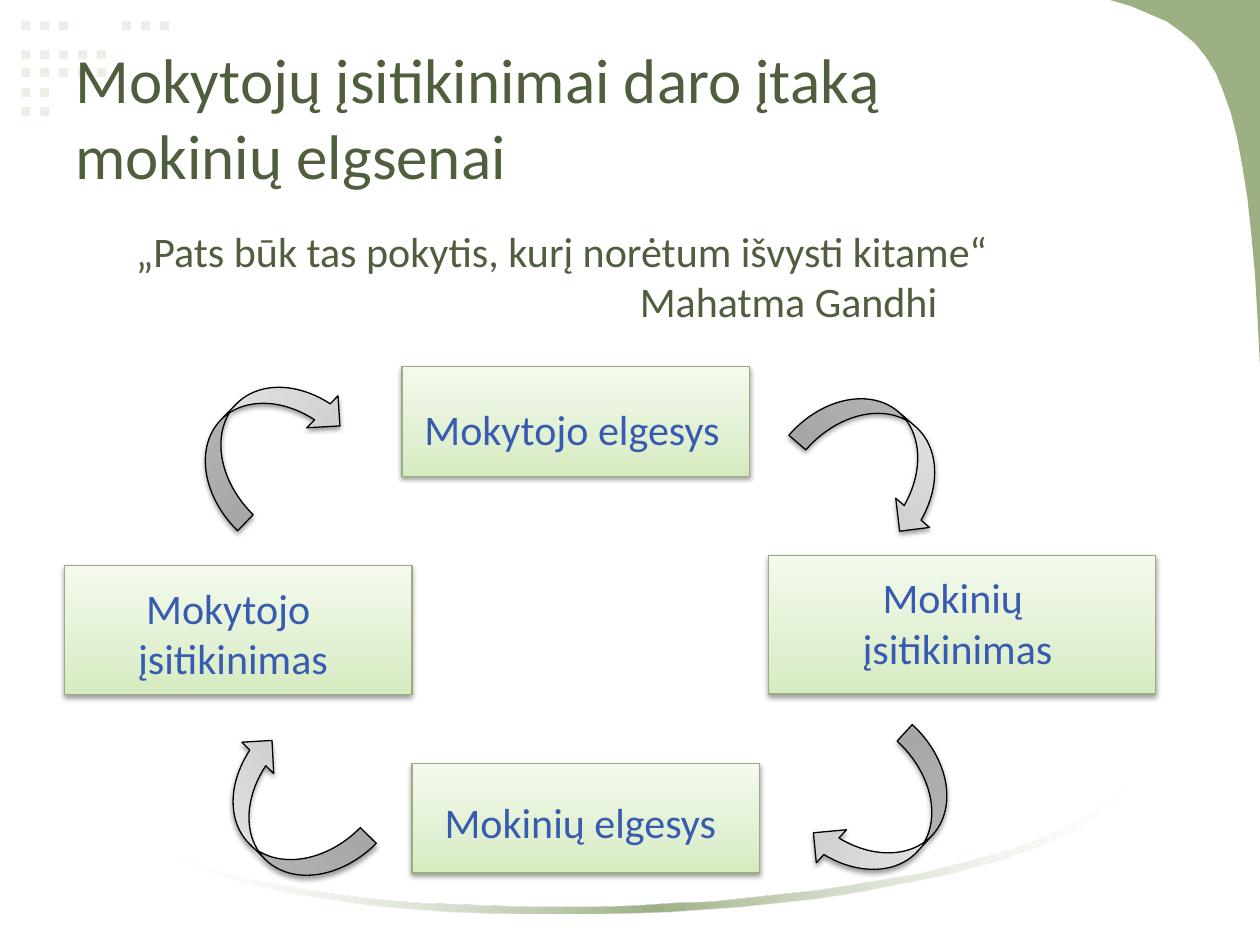
from lxml import etree
from pptx import Presentation
from pptx.dml.color import RGBColor
from pptx.enum.shapes import MSO_SHAPE
from pptx.enum.text import MSO_ANCHOR, PP_ALIGN
from pptx.oxml.ns import qn
from pptx.util import Inches, Pt

RECT, ARROW = MSO_SHAPE.RECTANGLE, MSO_SHAPE.CURVED_DOWN_ARROW
MIDDLE, TOP = MSO_ANCHOR.MIDDLE, MSO_ANCHOR.TOP
LEFT, CENTER = PP_ALIGN.LEFT, PP_ALIGN.CENTER


class Theme:
    font, title, body = "Calibri", Pt(36), Pt(24)
    dark, blue = "4F5E3C", "375BB0"
    dot, leaf, edge, black = "EBEFE6", "9CB084", "99AD80", "000000"
    # Gradient stops: position %, colour, opacity %
    green = [(0, "D5EBBF", 100), (35, "E1F0D2", 100), (100, "F3FAED", 100)]
    gray = [(0, "BDBDBD", 100), (35, "D1D1D1", 100), (100, "EEEEEE", 100)]
    sweep = [(0, "FFFFFF", 30), (50, "9CB084", 100), (100, "FFFFFF", 30)]


def paint(shape, fill, angle=270, line=None):
    """Fill with a colour or gradient stops; an outlined shape casts a shadow."""
    shape.shadow.inherit = False
    if isinstance(fill, str):
        shape.fill.solid()
        shape.fill.fore_color.rgb = RGBColor.from_string(fill)
    else:
        shape.fill.gradient()
        grad = shape.element.spPr.find(qn("a:gradFill"))
        for child in list(grad):
            grad.remove(child)
        stops = etree.SubElement(grad, qn("a:gsLst"))
        for pos, tint, alpha in fill:
            stop = etree.SubElement(stops, qn("a:gs"), pos=str(pos * 1000))
            color = etree.SubElement(stop, qn("a:srgbClr"), val=tint)
            etree.SubElement(color, qn("a:alpha"), val=str(alpha * 1000))
        etree.SubElement(grad, qn("a:lin"), ang=str(angle * 60000), scaled="0")
    if line is None:
        shape.line.fill.background()
        return
    shape.line.color.rgb = RGBColor.from_string(line)
    shape.line.width = Pt(0.75)
    effect = shape.element.spPr.find(qn("a:effectLst"))
    cast = etree.SubElement(effect, qn("a:outerShdw"), blurRad=str(Pt(3.1)),
                            dist=str(Pt(1.6)), dir="5400000", rotWithShape="0")
    color = etree.SubElement(cast, qn("a:srgbClr"), val=Theme.black)
    etree.SubElement(color, qn("a:alpha"), val="38000")


def write(place, lines, size, tint, align=LEFT, anchor=TOP):
    """Add a text box with one paragraph for each line."""
    frame = slide.shapes.add_textbox(*map(Inches, place)).text_frame
    frame.word_wrap = True
    frame.vertical_anchor = anchor
    frame.text = "\n".join(lines)
    for para in frame.paragraphs:
        para.alignment = align
        for run in para.runs:
            run.font.name, run.font.size = Theme.font, size
            run.font.color.rgb = RGBColor.from_string(tint)
    return frame


deck = Presentation()
deck.slide_width, deck.slide_height = Inches(10), Inches(7.5)
slide = deck.slides.add_slide(deck.slide_layouts[6])

# Dot pattern: left edge, top and count of each run of dots
dots = [(0.17, 0.17, 3), (0.97, 0.17, 3), (0.17, 0.4, 5), (0.17, 0.54, 5),
        (0.17, 0.7, 2), (0.17, 0.85, 2)]
for left, top, count in dots:
    for col in range(count):
        place = (left + 0.15 * col, top, 0.07, 0.07)
        paint(slide.shapes.add_shape(RECT, *map(Inches, place)), Theme.dot)

# Corner leaf and bottom sweep
corner = [
    (8.81, 0), (10, 0), (10, 2.91), (9.98, 2.52), (9.96, 2.17), (9.93, 1.85),
    (9.9, 1.57), (9.86, 1.32), (9.82, 1.1), (9.77, 0.9), (9.71, 0.73),
    (9.65, 0.58), (9.57, 0.45), (9.48, 0.34), (9.37, 0.25), (9.26, 0.17),
    (9.12, 0.11), (8.98, 0.05)]
sweep = [
    (8.92, 6.25), (8.92, 6.32), (8.81, 6.41), (8.67, 6.5), (8.52, 6.59),
    (8.35, 6.67), (8.16, 6.75), (7.95, 6.82), (7.73, 6.88), (7.5, 6.94),
    (7.25, 6.99), (7, 7.04), (6.73, 7.09), (6.46, 7.13), (6.17, 7.16),
    (5.89, 7.19), (5.6, 7.21), (5.31, 7.23), (5.01, 7.24), (4.72, 7.25),
    (4.14, 7.25), (3.85, 7.24), (3.57, 7.23), (3.3, 7.21), (3.04, 7.19),
    (2.79, 7.16), (2.55, 7.12), (2.32, 7.09), (2.1, 7.04), (1.91, 6.99),
    (1.72, 6.94), (1.56, 6.88), (1.42, 6.82), (1.42, 6.79), (1.56, 6.85),
    (1.73, 6.91), (1.92, 6.96), (2.12, 7), (2.34, 7.04), (2.57, 7.08),
    (2.81, 7.11), (3.07, 7.14), (3.33, 7.16), (3.61, 7.17), (3.89, 7.18),
    (4.17, 7.19), (4.76, 7.19), (5.05, 7.18), (5.34, 7.16), (5.64, 7.15),
    (5.93, 7.12), (6.21, 7.09), (6.49, 7.06), (6.76, 7.02), (7.03, 6.97),
    (7.29, 6.93), (7.53, 6.87), (7.76, 6.81), (7.98, 6.75), (8.18, 6.68),
    (8.37, 6.6), (8.54, 6.52), (8.68, 6.44), (8.81, 6.35)]
for points, fill in [(corner, Theme.leaf), (sweep, Theme.sweep)]:
    spots = [(Inches(x), Inches(y)) for x, y in points]
    pen = slide.shapes.build_freeform(*spots[0])
    pen.add_line_segments(spots[1:], close=True)
    paint(pen.convert_to_shape(), fill, angle=0)

# Title
write((0.5, 0.3, 9, 1.25),
      ["Mokytojų įsitikinimai daro įtaką \vmokinių elgsenai"],
      Theme.title, Theme.dark, anchor=MIDDLE)

# Cycle boxes: box place, label place, label lines, alignment
boxes = [
    ((3.19, 2.91, 2.76, 0.87), (3.27, 3.15, 2.6, 0.5),
     ["Mokytojo elgesys"], LEFT),
    ((3.27, 6.06, 2.76, 0.87), (3.43, 6.27, 2.44, 0.5),
     ["Mokinių elgesys"], LEFT),
    ((6.1, 4.41, 3.07, 1.1), (6.5, 4.49, 2.2, 0.91),
     ["Mokinių ", "įsitikinimas"], CENTER),
    ((0.51, 4.49, 2.76, 1.02), (0.75, 4.57, 2.2, 0.91),
     ["Mokytojo ", "įsitikinimas"], CENTER)]
for place, spot, lines, align in boxes:
    box = slide.shapes.add_shape(RECT, *map(Inches, place))
    paint(box, Theme.green, line=Theme.edge)
    write(spot, lines, Theme.body, Theme.blue, align)

# Cycle arrows, clockwise from top right
arrows = [(6.33, 3.27, 40.9), (6.38, 6.13, 132.4),
          (1.59, 6.12, 224.6), (1.43, 3.13, 314.3)]
for left, top, turn in arrows:
    place = (left, top, 1.34, 0.71)
    arrow = slide.shapes.add_shape(ARROW, *map(Inches, place))
    arrow.rotation = turn
    paint(arrow, Theme.gray, line=Theme.black)

# Quote with its author indented
quote = write((0.98, 1.74, 8.27, 0.91),
              ["„Pats būk tas pokytis, kurį norėtum išvysti kitame“",
               "Mahatma Gandhi"], Theme.body, Theme.dark)
author = quote.paragraphs[1]
author._p.get_or_add_pPr().set("marL", str(Inches(4)))

deck.save("out.pptx")
